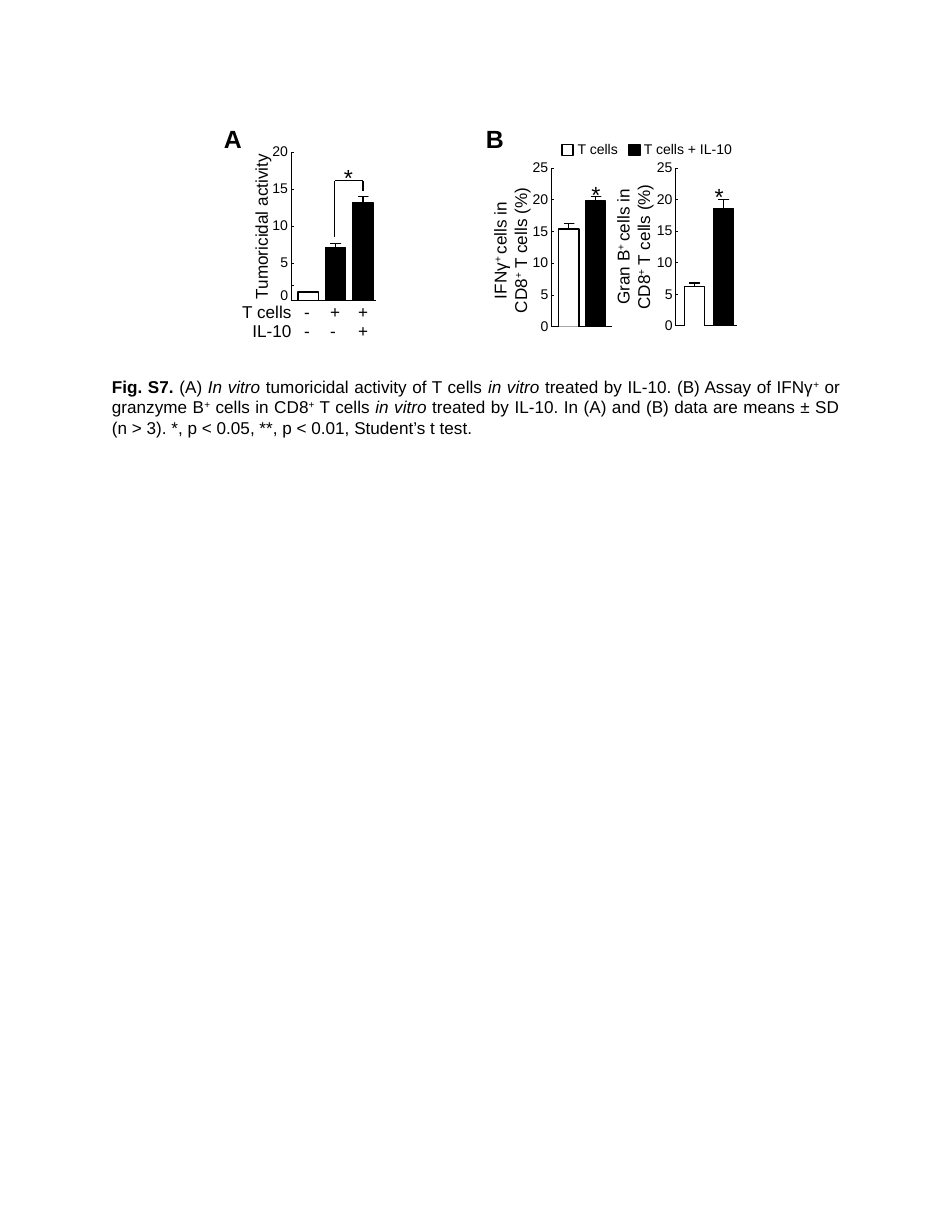
import pptx
from pptx.dml.color import RGBColor
from pptx.enum.shapes import MSO_CONNECTOR, MSO_SHAPE
from pptx.enum.text import MSO_AUTO_SIZE, PP_ALIGN
from pptx.oxml.ns import qn
from pptx.util import Cm, Pt
from lxml import etree

BLACK = RGBColor(0x00, 0x00, 0x00)
WHITE = RGBColor(0xFF, 0xFF, 0xFF)
FONT = "Arial"
AXIS_WIDTH, BAR_LINE = 0.63, 0.88
BAR_WIDTH, CAP_WIDTH, TICK = 0.46, 0.23, 0.06
LABEL_HEIGHT, DIGIT_WIDTH = 0.38, 0.18

# Content: lengths in cm; runs are (text, style), with b bold, i italic, ^ superscript
CD8_LINE = [("CD8", ""), ("+", "^"), (" T cells (%)", "")]
CHARTS = [
    dict(axis=(6.60, 8.53), base=6.81, unit=0.168, top=20, ticks=(2, 5, 10, 15, 20),
         labels=(0, 5, 10, 15, 20), zero_shift=-0.11, first_bar=6.76, pitch=0.62,
         bars=[(1.1, 0.1, None), (7.1, 0.6, BLACK), (13.2, 0.8, BLACK)],
         title=[[("Tumoricidal activity", "")]], title_centre=(5.93, 5.14),
         title_size=(3.33, 0.48)),
    dict(axis=(12.50, 13.89), base=7.41, unit=0.144, top=25, ticks=(5, 10, 15, 20, 25),
         labels=(0, 5, 10, 15, 20, 25), zero_shift=0, first_bar=12.67, pitch=0.61,
         bars=[(15.4, 0.9, WHITE), (19.8, 0.7, BLACK)],
         title=[[("IFNγ", ""), ("+ ", "^"), ("cells in", "")], CD8_LINE],
         title_centre=(11.57, 5.68), title_size=(2.87, 0.94)),
    dict(axis=(15.32, 16.71), base=7.39, unit=0.143, top=25, ticks=(0, 5, 10, 15, 20, 25),
         labels=(0, 5, 10, 15, 20, 25), zero_shift=0, first_bar=15.52, pitch=0.66,
         bars=[(6.2, 0.6, WHITE), (18.6, 1.4, BLACK)],
         title=[[("Gran B", ""), ("+ ", "^"), ("cells in", "")], CD8_LINE],
         title_centre=(14.36, 5.60), title_size=(2.87, 0.94)),
]
PANEL_LETTERS = [("A", 4.83), ("B", 10.77)]
LEGEND = [("T cells", WHITE, 12.75, 12.85, 1.45), (" T cells + IL-10", BLACK, 14.27, 14.27, 2.59)]
TREATMENTS = [("T cells", 6.71, "-++"), ("IL-10", 7.14, "--+")]
SIGN_LEFTS = (6.65, 7.24, 7.87)
STARS = [("*", 7.80, 3.71, 0.20), ("*", 13.41, 4.09, 0.20), ("**", 16.21, 4.14, 0.41)]
BRACKET = [(8.23, 4.11, 8.23, 4.34), (7.59, 4.11, 7.59, 5.38), (7.59, 4.10, 8.23, 4.10)]
CAPTION = [
    ("Fig. S7. ", "b"), ("(A) ", ""), ("In vitro ", "i"),
    ("tumoricidal activity of T cells ", ""), ("in vitro ", "i"),
    ("treated by IL-10. (B) Assay of IFNγ", ""), ("+", "^"), (" or granzyme B", ""),
    ("+", "^"), (" cells in CD8", ""), ("+", "^"), (" T cells ", ""), ("in vitro", "i"),
    (" treated by IL-10. In (A) and (B) data are means ± SD (n > 3). "
     "*, p < 0.05, **, p < 0.01, Student’s t test.", ""),
]

presentation = pptx.Presentation()
presentation.slide_width, presentation.slide_height = Cm(21.59), Cm(27.94)
slide = presentation.slides.add_slide(presentation.slide_layouts[6])
shapes = slide.shapes


def add_text(paragraphs, left, top, width, height, size, align=PP_ALIGN.LEFT,
             inset=False, wrap=False):
    box = shapes.add_textbox(Cm(left), Cm(top), Cm(width), Cm(height))
    frame = box.text_frame
    frame.word_wrap = wrap
    frame.auto_size = MSO_AUTO_SIZE.SHAPE_TO_FIT_TEXT
    if not inset:
        frame.margin_left = frame.margin_right = frame.margin_top = frame.margin_bottom = 0
    for index, runs in enumerate(paragraphs):
        paragraph = frame.add_paragraph() if index else frame.paragraphs[0]
        paragraph.alignment = align
        for text, style in runs:
            run = paragraph.add_run()
            run.text = text
            run.font.name, run.font.size = FONT, Pt(size)
            run.font.color.rgb = BLACK
            run.font.bold, run.font.italic = "b" in style, "i" in style
            if "^" in style:
                run._r.get_or_add_rPr().set("baseline", "30000")
    return box


def add_line(x1, y1, x2, y2, width):
    line = shapes.add_connector(MSO_CONNECTOR.STRAIGHT, Cm(x1), Cm(y1), Cm(x2), Cm(y2))
    line.line.color.rgb, line.line.width = BLACK, Pt(width)
    etree.SubElement(line._element.spPr, qn("a:effectLst"))


def add_box(left, top, width, height, fill, line_width=None):
    box = shapes.add_shape(MSO_SHAPE.RECTANGLE, Cm(left), Cm(top), Cm(width), Cm(height))
    box.shadow.inherit = False
    box.fill.solid()
    box.fill.fore_color.rgb = fill
    if line_width:
        box.line.color.rgb, box.line.width = BLACK, Pt(line_width)
    else:
        box.line.fill.background()


def add_outline(points):
    start, *rest = [(Cm(x), Cm(y)) for x, y in points]
    builder = shapes.build_freeform(*start)
    builder.add_line_segments(rest, close=False)
    outline = builder.convert_to_shape()
    outline.shadow.inherit = False
    outline.fill.background()
    outline.line.color.rgb, outline.line.width = BLACK, Pt(BAR_LINE)


def draw_chart(chart):
    axis_left, axis_right = chart["axis"]
    base = chart["base"]

    def height_at(value):
        return base - value * chart["unit"]

    # Axes, ticks and scale labels
    add_line(axis_left, base, axis_left, height_at(chart["top"]), AXIS_WIDTH)
    add_line(axis_left, base, axis_right, base, AXIS_WIDTH)
    for value in chart["ticks"]:
        y = height_at(value)
        add_line(axis_left, y, axis_left + TICK, y, AXIS_WIDTH)
    for value in chart["labels"]:
        width = DIGIT_WIDTH * len(str(value))
        y = height_at(value) + (0 if value else chart["zero_shift"])
        add_text([[(str(value), "")]], axis_left - 0.06 - width, y - LABEL_HEIGHT / 2 - 0.02,
                 width, LABEL_HEIGHT, 9)

    # Bars with error bars
    for index, (value, error, fill) in enumerate(chart["bars"]):
        left = chart["first_bar"] + index * chart["pitch"]
        right, middle = left + BAR_WIDTH, left + BAR_WIDTH / 2
        top, cap = height_at(value), height_at(value + error)
        if fill is not None:
            add_box(left, top, BAR_WIDTH, base - top, fill)
        add_outline([(left, base), (left, top), (right, top), (right, base)])
        add_outline([(middle - CAP_WIDTH / 2, cap), (middle + CAP_WIDTH / 2, cap),
                     (middle, cap), (middle, top)])

    # Axis title, reading upwards
    (x, y), (width, height) = chart["title_centre"], chart["title_size"]
    title = add_text(chart["title"], x - width / 2, y - height / 2, width, height, 11,
                     PP_ALIGN.CENTER)
    title.rotation = 270


for chart in CHARTS:
    draw_chart(chart)

# Panel letters and legend
for letter, left in PANEL_LETTERS:
    add_text([[(letter, "b")]], left, 2.67, 0.95, 0.94, 16, inset=True, wrap=True)
for text, fill, key_left, text_left, width in LEGEND:
    add_box(key_left, 3.28, 0.25, 0.25, fill, 1)
    add_text([[(text, "")]], text_left, 3.07, width, 0.64, 9, inset=True, wrap=True)

# Treatment table under panel A
for name, top, signs in TREATMENTS:
    add_text([[(name, "")]], 4.90, top, 1.96, 0.74, 11, PP_ALIGN.RIGHT, inset=True, wrap=True)
    for left, sign in zip(SIGN_LEFTS, signs):
        add_text([[(sign, "")]], left, top, 0.6, 0.74, 11, inset=True, wrap=True)

# Significance marks
for text, left, top, width in STARS:
    add_text([[(text, "")]], left, top, width, 0.64, 15)
for ends in BRACKET:
    add_line(*ends, BAR_LINE)

# Caption
add_text([CAPTION], 2.54, 8.53, 16.51, 1.42, 11, PP_ALIGN.JUSTIFY, wrap=True)

presentation.save("out.pptx")
